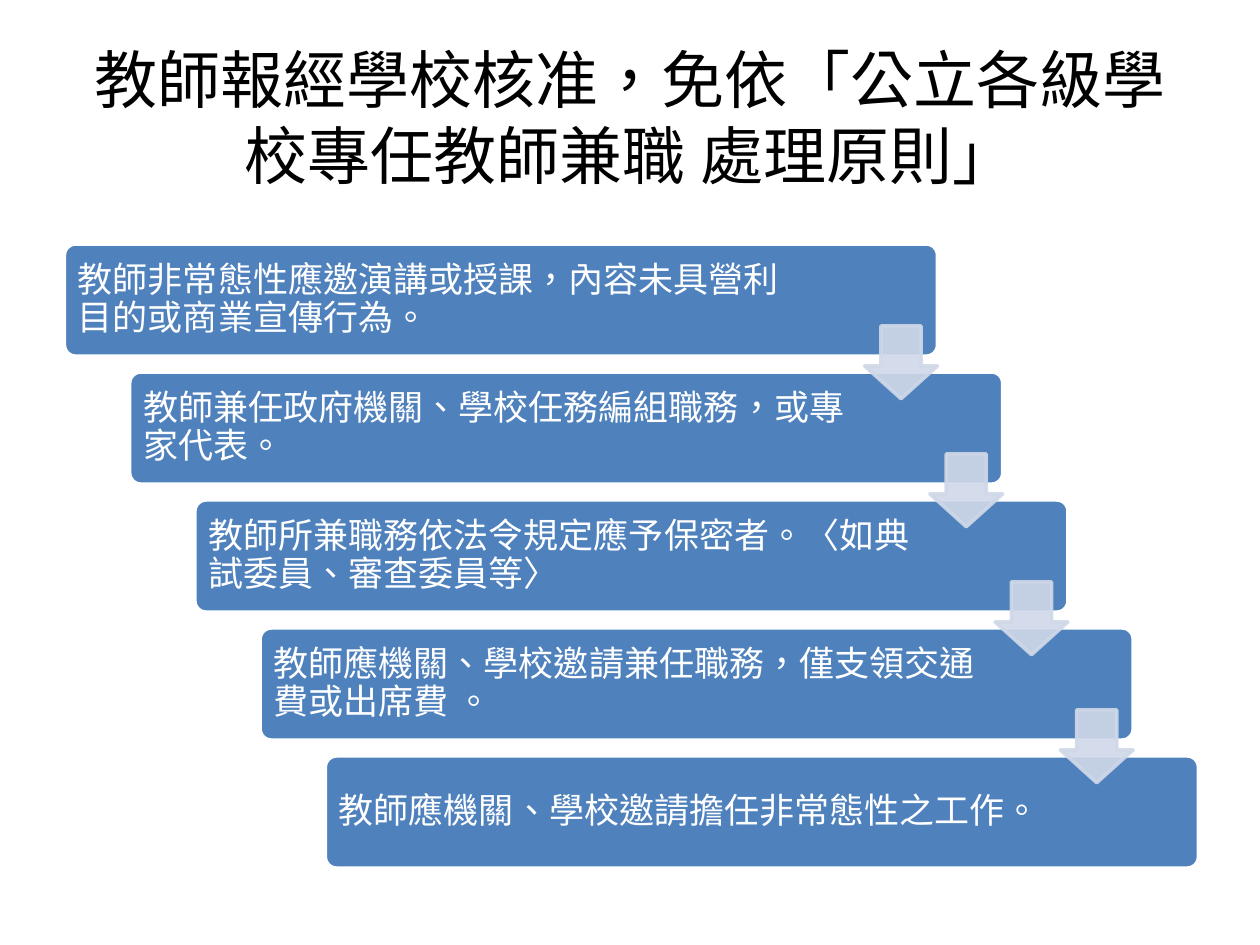
import pptx
import pptx.util
import pptx.dml.color
import pptx.enum.shapes
import pptx.enum.text
import pptx.oxml.ns
import lxml.etree

Cm = pptx.util.Cm
Pt = pptx.util.Pt
KIND = pptx.enum.shapes.MSO_SHAPE
ALIGN = pptx.enum.text.PP_ALIGN
MIDDLE = pptx.enum.text.MSO_ANCHOR.MIDDLE

TITLE = "教師報經學校核准，免依「公立各級學校專任教師兼職 處理原則」"
STEPS = [
    "教師非常態性應邀演講或授課，內容未具營利目的或商業宣傳行為。",
    "教師兼任政府機關、學校任務編組職務，或專家代表。",
    "教師所兼職務依法令規定應予保密者。〈如典試委員、審查委員等〉",
    "教師應機關、學校邀請兼任職務，僅支領交通費或出席費 。",
    "教師應機關、學校邀請擔任非常態性之工作。",
]


def paint(color, value):
    color.rgb = pptx.dml.color.RGBColor.from_string(value)


def fade(shape, percent):
    for fill in shape._element.spPr.iter(pptx.oxml.ns.qn("a:srgbClr")):
        alpha = lxml.etree.SubElement(fill, pptx.oxml.ns.qn("a:alpha"))
        alpha.set("val", str(percent * 1000))


def write(frame, text, size, font, color, align):
    frame.text = text
    frame.word_wrap = True
    frame.vertical_anchor = MIDDLE
    par = frame.paragraphs[0]
    par.alignment = align
    for run in par.runs:
        run.font.size = Pt(size)
        run.font.name = font
        paint(run.font.color, color)
        run._r.get_or_add_rPr().set("lang", "zh-TW")
    return par


def add_shape(slide, kind, box, fill, line, adjust):
    shape = slide.shapes.add_shape(kind, *map(Cm, box))
    shape.shadow.inherit = False
    shape.fill.solid()
    paint(shape.fill.fore_color, fill)
    paint(shape.line.color, line)
    shape.line.width = Pt(2)
    for i, value in enumerate(adjust):
        shape.adjustments[i] = value
    return shape


def add_title(slide, box):
    title = slide.shapes.title
    title.left, title.top, title.width, title.height = map(Cm, box)
    write(title.text_frame, TITLE, 36, "Noto Sans CJK JP", "000000", ALIGN.CENTER)


def add_card(slide, box, text):
    left, top, width, height = box
    pad = 0.06
    add_shape(slide, KIND.ROUNDED_RECTANGLE, box, "4F81BD", "FFFFFF", [0.1])
    label = slide.shapes.add_textbox(
        Cm(left + pad), Cm(top + pad), Cm(width - 2.92), Cm(height - 2 * pad))
    frame = label.text_frame
    par = write(frame, text, 20, "Calibri", "FFFFFF", ALIGN.LEFT)
    par.line_spacing = 0.9
    par.space_after = Pt(7)
    frame.margin_left = frame.margin_right = Cm(0.21)
    frame.margin_top = frame.margin_bottom = Cm(0.21)


def add_arrow(slide, box):
    left, top, width, height = box
    size = 1.47
    spot = (left + width - size, top + 1.65, size, size)
    arrow = add_shape(slide, KIND.DOWN_ARROW, spot, "D0D8E8", "D0D8E8", [0.55, 0.45])
    arrow.adjustments[0], arrow.adjustments[1] = 0.55, 0.45
    fade(arrow, 90)


def add_stairs(slide, box):
    left, top, width, height = box
    wide, high = 17.6, 2.26
    last = len(STEPS) - 1
    right, down = (width - wide) / last, (height - high) / last
    cards = [(left + i * right, top + i * down, wide, high) for i in range(last + 1)]
    for card, text in zip(cards, STEPS):
        add_card(slide, card, text)
    for card in cards[:-1]:
        add_arrow(slide, card)


def main():
    deck = pptx.Presentation()
    deck.slide_width, deck.slide_height = Cm(25.4), Cm(19.05)
    slide = deck.slides.add_slide(deck.slide_layouts[5])
    add_title(slide, (1.27, 0.76, 22.86, 3.18))
    add_stairs(slide, (1.3, 4.92, 22.86, 12.58))
    deck.save("out.pptx")


if __name__ == "__main__":
    main()
